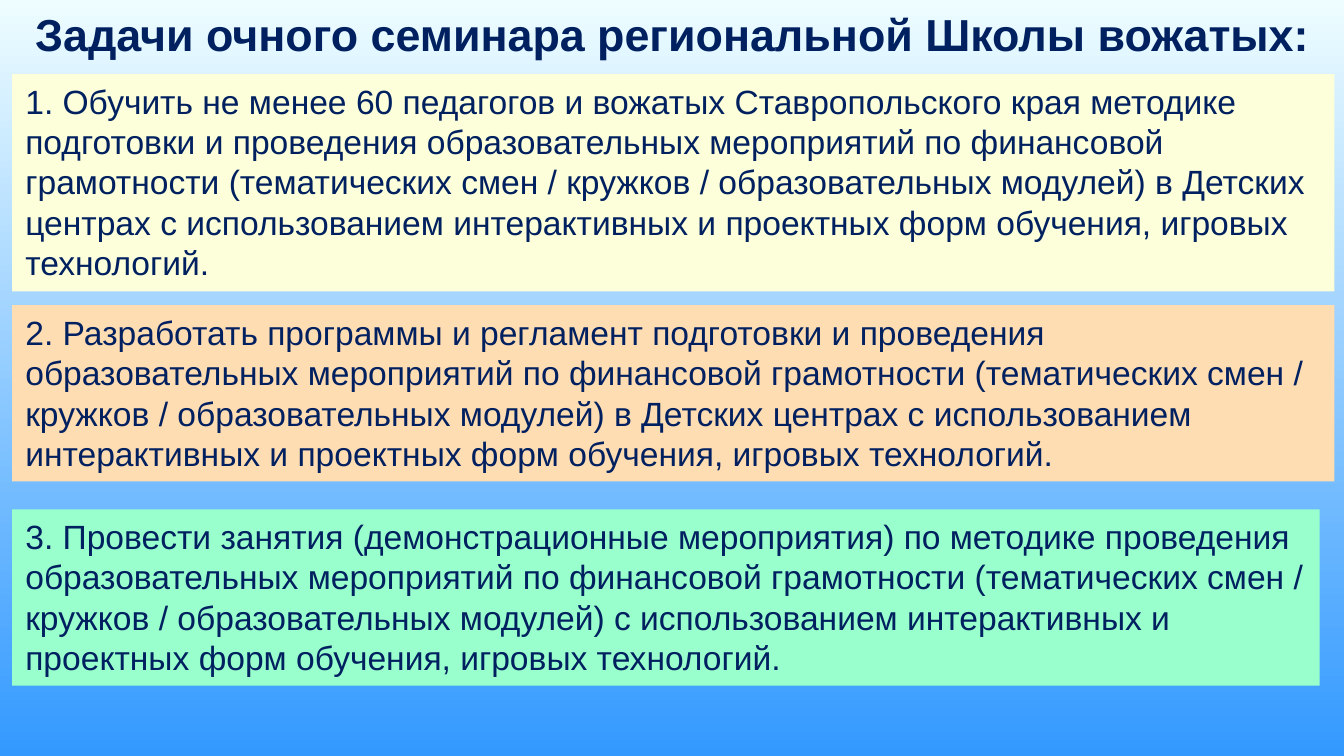
from pptx import Presentation
from pptx.dml.color import RGBColor
from pptx.enum import shapes, text
from pptx.util import Cm, Pt

COLORS = {
    "sky_top": "EEFDFF",
    "sky_bottom": "3399FF",
    "navy": "002060",
    "cream": "FCFFD9",
    "peach": "FFDDB3",
    "mint": "99FFCC",
}

FRAME_FORMAT = {
    "word_wrap": True,
    "auto_size": text.MSO_AUTO_SIZE.SHAPE_TO_FIT_TEXT,
    "vertical_anchor": text.MSO_ANCHOR.TOP,
}
TITLE_FONT = {"name": "Arial", "size": Pt(24), "bold": True}
TASK_FONT = {"name": "Arial", "size": Pt(18), "bold": False}

TITLE = "Задачи очного семинара региональной Школы вожатых:"
TASK_LEFT = 0.23

# Top, width and height in centimetres, fill, wording
TASKS = [
    (1.4, 24.99, 4.11, "cream",
     "1. Обучить не менее 60 педагогов и вожатых Ставропольского края "
     "методике подготовки и проведения образовательных мероприятий по "
     "финансовой грамотности (тематических смен / кружков / образовательных "
     "модулей) в Детских центрах с использованием интерактивных и проектных "
     "форм обучения, игровых технологий."),
    (5.77, 24.99, 3.33, "peach",
     "2. Разработать программы и регламент подготовки и проведения "
     "образовательных мероприятий по финансовой грамотности (тематических "
     "смен / кружков / образовательных модулей) в Детских центрах с "
     "использованием интерактивных и проектных форм обучения, игровых "
     "технологий."),
    (9.63, 24.71, 3.33, "mint",
     "3. Провести занятия (демонстрационные мероприятия) по методике "
     "проведения образовательных мероприятий по финансовой грамотности "
     "(тематических смен / кружков / образовательных модулей) с "
     "использованием интерактивных и проектных форм обучения, игровых "
     "технологий."),
]


def color(name):
    return RGBColor.from_string(COLORS[name])


def apply_format(target, values):
    for attribute, value in values.items():
        setattr(target, attribute, value)


def paint_background(slide):
    """Fill the slide with a gradient running from top to bottom."""
    fill = slide.background.fill
    fill.gradient()
    fill.gradient_angle = 270
    for stop, name in zip(fill.gradient_stops, ("sky_top", "sky_bottom")):
        stop.color.rgb = color(name)


def write(frame, wording, font_format, alignment):
    apply_format(frame, FRAME_FORMAT)
    paragraph = frame.paragraphs[0]
    paragraph.alignment = alignment
    run = paragraph.add_run()
    run.text = wording
    apply_format(run.font, font_format)
    run.font.color.rgb = color("navy")


def add_title(slide, width):
    title = slide.shapes.add_textbox(0, 0, width, Cm(1.28))
    write(title.text_frame, TITLE, TITLE_FONT, text.PP_ALIGN.CENTER)


def add_task(slide, top, width, height, fill_name, wording):
    task = slide.shapes.add_shape(
        shapes.MSO_SHAPE.RECTANGLE, Cm(TASK_LEFT), Cm(top), Cm(width), Cm(height))
    task.shadow.inherit = False
    task.fill.solid()
    task.fill.fore_color.rgb = color(fill_name)
    task.line.fill.background()
    write(task.text_frame, wording, TASK_FONT, text.PP_ALIGN.LEFT)


def main():
    deck = Presentation()
    deck.slide_width, deck.slide_height = Cm(25.4), Cm(14.29)
    slide = deck.slides.add_slide(deck.slide_layouts[6])
    paint_background(slide)
    add_title(slide, deck.slide_width)
    for task in TASKS:
        add_task(slide, *task)
    deck.save("out.pptx")


if __name__ == "__main__":
    main()
